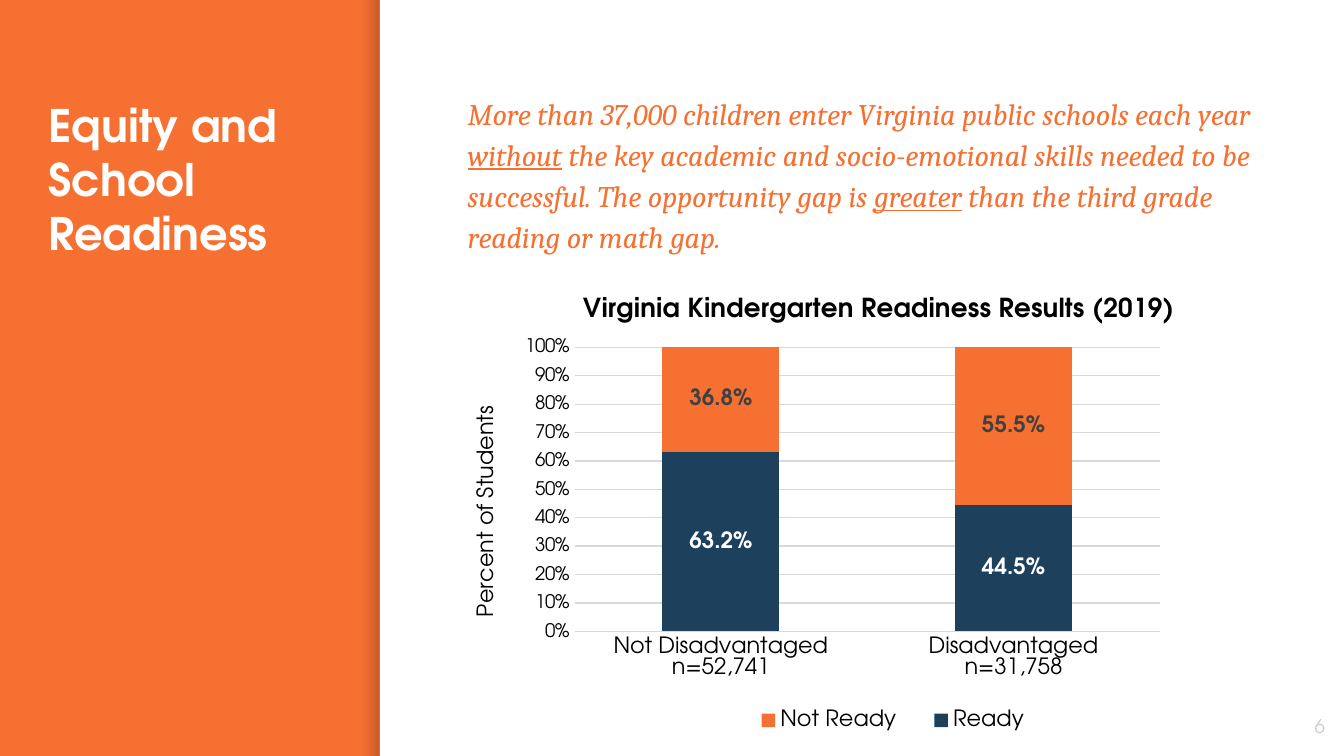
from lxml import etree
from pptx import Presentation
from pptx import util as u
from pptx.chart import data as chart_data
from pptx.dml.color import RGBColor
from pptx.enum import chart as charts, shapes, text
from pptx.oxml.ns import qn

ORANGE, NAVY, WHITE, BLACK = "F67031", "1D405D", "FFFFFF", "000000"
SHADOW, GRID, DARK, PALE = "000014", "D9D9D9", "404040", "CCCCCC"
SANS, SERIF = "TeX Gyre Adventor", "Cambria"
WIDTH, HEIGHT, SIDEBAR, SHADE = 25.4, 14.29, 7.18, 0.3

TITLE = "Equity and School Readiness"
STATEMENT = [
    ("More than 37,000 children enter Virginia public schools each year ", False),
    ("without", True),
    (" the key academic and socio-emotional skills needed to be successful. "
     "The opportunity gap is ", False),
    ("greater", True),
    (" than the third grade reading or math gap.", False),
]
PAGE = "6"
CHART_TITLE = "Virginia Kindergarten Readiness Results (2019)"
AXIS_TITLE = "Percent of Students"
CATEGORIES = ["Not Disadvantaged\nn=52,741", "Disadvantaged\nn=31,758"]
SERIES = [
    ("Ready", (0.632, 0.445), NAVY, WHITE),
    ("Not Ready", (0.368, 0.555), ORANGE, DARK),
]


def color(value):
    return RGBColor.from_string(value)


def style(font, size, value, name=SANS, bold=False, italic=False):
    font.size, font.name = u.Pt(size), name
    font.bold, font.italic = bold, italic
    font.color.rgb = color(value)


def add_rectangle(slide, left, width):
    shape = slide.shapes.add_shape(
        shapes.MSO_SHAPE.RECTANGLE, u.Cm(left), 0, u.Cm(width), u.Cm(HEIGHT))
    shape.shadow.inherit = False
    shape.line.fill.background()
    return shape


def prepare_frame(shape, anchor=text.MSO_ANCHOR.TOP):
    frame = shape.text_frame
    frame.word_wrap = True
    frame.auto_size = text.MSO_AUTO_SIZE.NONE
    frame.vertical_anchor = anchor
    frame.margin_left = frame.margin_right = u.Cm(0.25)
    frame.margin_top = frame.margin_bottom = u.Cm(0.25)
    return frame


def add_text(slide, left, top, width, height, anchor=text.MSO_ANCHOR.TOP):
    box = slide.shapes.add_textbox(u.Cm(left), u.Cm(top), u.Cm(width), u.Cm(height))
    return prepare_frame(box, anchor)


def place(element, index, **fractions):
    for old in element.findall(qn("c:layout")):
        element.remove(old)
    layout = etree.Element(qn("c:layout"))
    manual = etree.SubElement(layout, qn("c:manualLayout"))
    settings = {"xMode": "edge", "yMode": "edge", **fractions}
    if "w" in fractions:
        settings = {"layoutTarget": "inner", **settings} if index == 0 else settings
    for tag, value in settings.items():
        etree.SubElement(manual, qn("c:" + tag)).set("val", str(value))
    element.insert(index, layout)


def set_title(owner, words, size, bold, x, y):
    owner.has_title = True
    title = owner.chart_title if hasattr(owner, "chart_title") else owner.axis_title
    title.text_frame.text = words
    style(title.text_frame.paragraphs[0].runs[0].font, size, BLACK, bold=bold)
    place(title._element, 1, x=x, y=y)
    return title


def add_sidebar(slide):
    slide.background.fill.solid()
    slide.background.fill.fore_color.rgb = color(ORANGE)
    shade = add_rectangle(slide, SIDEBAR - SHADE, SHADE)
    shade.fill.gradient()
    shade.fill.gradient_angle = 0
    for stop in shade.fill.gradient_stops:
        stop.color.rgb = color(SHADOW)
    stops = shade._element.spPr.iter(qn("a:srgbClr"))
    for stop, alpha in zip(list(stops), (0, 20000)):
        etree.SubElement(stop, qn("a:alpha")).set("val", str(alpha))
    panel = add_rectangle(slide, SIDEBAR, WIDTH - SIDEBAR)
    panel.fill.solid()
    panel.fill.fore_color.rgb = color(WHITE)


def add_words(slide):
    title = slide.shapes.title
    title.left, title.top, title.width, title.height = map(u.Cm, (0.66, 1.6, 5.69, 11.05))
    paragraph = prepare_frame(title).paragraphs[0]
    paragraph.text = TITLE
    paragraph.alignment = text.PP_ALIGN.LEFT
    style(paragraph.runs[0].font, 24, WHITE, bold=True)

    paragraph = add_text(slide, 8.59, 1.45, 15.54, 3.35).paragraphs[0]
    paragraph.line_spacing = 1.15
    for words, underlined in STATEMENT:
        run = paragraph.add_run()
        run.text = words
        style(run.font, 16, ORANGE, SERIF, italic=True)
        run.font.underline = underlined

    paragraph = add_text(slide, 23.77, 13.18, 1.52, 1.09, text.MSO_ANCHOR.MIDDLE).paragraphs[0]
    paragraph.text = PAGE
    paragraph.alignment = text.PP_ALIGN.RIGHT
    style(paragraph.runs[0].font, 10, PALE)


def add_readiness_chart(slide):
    data = chart_data.CategoryChartData(number_format="0.0%")
    data.categories = CATEGORIES
    for name, values, _, _ in SERIES:
        data.add_series(name, values)
    chart = slide.shapes.add_chart(
        charts.XL_CHART_TYPE.COLUMN_STACKED,
        u.Cm(7.87), u.Cm(5.31), u.Cm(16.99), u.Cm(8.79), data).chart
    style(chart.font, 12, BLACK)
    set_title(chart, CHART_TITLE, 14, True, 0.18, 0.02)

    plot = chart.plots[0]
    plot.gap_width, plot.overlap, plot.vary_by_categories = 150, 100, False
    for series, (_, _, fill, label) in zip(plot.series, SERIES):
        series.format.fill.solid()
        series.format.fill.fore_color.rgb = color(fill)
        labels = series.data_labels
        labels.show_value = True
        labels.number_format, labels.number_format_is_linked = "0.0%", False
        style(labels.font, 12, label, bold=True)

    category, value = chart.category_axis, chart.value_axis
    for axis, size in ((category, 12), (value, 10)):
        axis.major_tick_mark = axis.minor_tick_mark = charts.XL_TICK_MARK.NONE
        style(axis.tick_labels.font, size, BLACK)
    value.minimum_scale, value.maximum_scale, value.major_unit = 0, 1, 0.1
    value.tick_labels.number_format = "0%"
    value.tick_labels.number_format_is_linked = False
    value.format.line.fill.background()
    for line in (category.format.line, value.major_gridlines.format.line):
        line.color.rgb, line.width = color(GRID), u.Pt(0.75)
    axis_title = set_title(value, AXIS_TITLE, 12, False, 0.06, 0.26)
    body = axis_title._element.find(".//" + qn("a:bodyPr"))
    body.set("rot", "-5400000")
    body.set("vert", "horz")

    chart.has_legend = True
    chart.legend.position = charts.XL_LEGEND_POSITION.RIGHT
    chart.legend.include_in_layout = False
    style(chart.legend.font, 12, BLACK)
    place(chart.legend._element, 1, x=0.35, y=0.9, w=0.36, h=0.09)
    plot_area = chart._chartSpace.find(".//" + qn("c:plotArea"))
    place(plot_area, 0, x=0.176, y=0.143, w=0.651, h=0.611)


def main():
    presentation = Presentation()
    presentation.slide_width, presentation.slide_height = u.Cm(WIDTH), u.Cm(HEIGHT)
    slide = presentation.slides.add_slide(presentation.slide_layouts[5])
    add_sidebar(slide)
    add_words(slide)
    add_readiness_chart(slide)
    tree = slide.shapes._spTree
    title = slide.shapes.title._element
    tree.remove(title)
    tree.insert(4, title)
    presentation.save("out.pptx")


if __name__ == "__main__":
    main()
